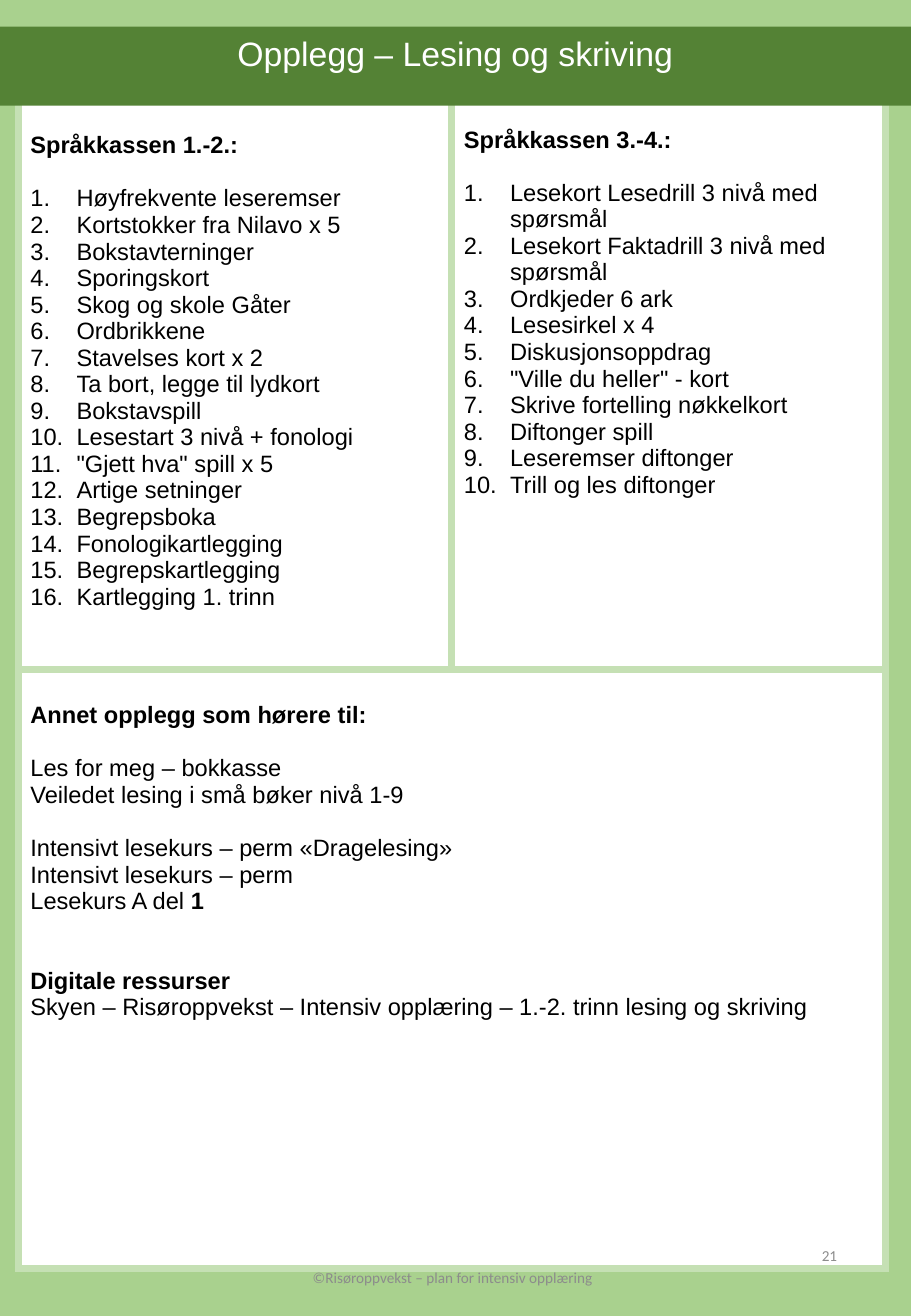
from lxml import etree
from pptx import Presentation
from pptx import util as u
from pptx.dml.color import RGBColor
from pptx.enum import shapes, text
from pptx.oxml import ns

COLORS = {"background": "A9D18E", "border": "C5E0B4", "banner": "548235",
          "cell": "FFFFFF", "title": "FFFFFF", "body": "000000", "footer": "8C8C8C"}
WIDTH, HEIGHT = 7.5, 10.83
LINE = 15.75
TITLE = "Opplegg – Lesing og skriving"
FOOTERS = [
    ("21", text.PP_ALIGN.RIGHT, 5.3, 10.04, 1.69),
    ("©Risøroppvekst – plan for intensiv opplæring", text.PP_ALIGN.CENTER, 2.46, 10.22, 2.53),
]
FIRST_BOX = [
    "Høyfrekvente leseremser", "Kortstokker fra Nilavo x 5", "Bokstavterninger",
    "Sporingskort", "Skog og skole Gåter", "Ordbrikkene", "Stavelses kort x 2",
    "Ta bort, legge til lydkort", "Bokstavspill", "Lesestart 3 nivå + fonologi",
    "\"Gjett hva\" spill x 5", "Artige setninger", "Begrepsboka",
    "Fonologikartlegging", "Begrepskartlegging", "Kartlegging 1. trinn",
]
SECOND_BOX = [
    "Lesekort Lesedrill 3 nivå med spørsmål", "Lesekort Faktadrill 3 nivå med spørsmål",
    "Ordkjeder 6 ark", "Lesesirkel x 4", "Diskusjonsoppdrag",
    "\"Ville du heller\" - kort", "Skrive fortelling nøkkelkort", "Diftonger spill",
    "Leseremser diftonger", "Trill og les diftonger",
]


def numbered(heading, items):
    return [([(heading, True)], 0, False)] + [
        ([(item, False)], int(index == 0), True) for index, item in enumerate(items)]


OTHER = [
    ([("Annet opplegg som hørere til:", True)], 0, False),
    ([("Les for meg – bokkasse", False)], 1, False),
    ([("Veiledet lesing i små bøker nivå 1-9", False)], 0, False),
    ([("Intensivt lesekurs – perm «Dragelesing»", False)], 1, False),
    ([("Intensivt lesekurs – perm", False)], 0, False),
    ([("Lesekurs A del ", False), ("1", True)], 0, False),
    ([("Digitale ressurser", True)], 2, False),
    ([("Skyen – Risøroppvekst – Intensiv opplæring – 1.-2. trinn lesing og skriving", False)], 0, False),
]
CELLS = [
    (0, 0, 14, numbered("Språkkassen 1.-2.:", FIRST_BOX)),
    (0, 1, 11, numbered("Språkkassen 3.-4.:", SECOND_BOX)),
    (1, 0, 14, OTHER),
]
COLUMNS, ROWS = [3.57, 3.57], [4.69, 4.93]


def color(name):
    return RGBColor.from_string(COLORS[name])


def style(run, font_name, size, color_name, bold=False):
    run.font.name = font_name
    run.font.size = u.Pt(size)
    run.font.bold = bold
    run.font.color.rgb = color(color_name)


def add_border(cell):
    properties = cell._tc.get_or_add_tcPr()
    for index, side in enumerate(("lnL", "lnR", "lnT", "lnB")):
        line = etree.Element(ns.qn("a:" + side), w=str(u.Pt(4.5)))
        fill = etree.SubElement(line, ns.qn("a:solidFill"))
        etree.SubElement(fill, ns.qn("a:srgbClr"), val=COLORS["border"])
        properties.insert(index, line)


def add_number(paragraph):
    properties = paragraph._p.get_or_add_pPr()
    indent = u.Inches(0.38)
    properties.set("marL", str(indent))
    properties.set("indent", str(-indent))
    etree.SubElement(properties, ns.qn("a:buFont"), typeface="Arial")
    etree.SubElement(properties, ns.qn("a:buAutoNum"), type="arabicPeriod")


def fill_cell(cell, lead_size, content):
    cell.fill.solid()
    cell.fill.fore_color.rgb = color("cell")
    cell.margin_top = u.Inches(0.05) + u.Pt(lead_size * LINE / 14)
    frame = cell.text_frame
    for index, (runs, gap, is_numbered) in enumerate(content):
        paragraph = frame.paragraphs[0] if index == 0 else frame.add_paragraph()
        if is_numbered:
            add_number(paragraph)
        if gap:
            paragraph.space_before = u.Pt(gap * LINE)
        for words, bold in runs:
            run = paragraph.add_run()
            run.text = words
            style(run, "Arial", 14, "body", bold)


def add_grid(slide):
    table = slide.shapes.add_table(
        len(ROWS), len(COLUMNS), u.Inches(0.15), u.Inches(0.82),
        u.Inches(sum(COLUMNS)), u.Inches(sum(ROWS))).table
    table.first_row = table.horz_banding = False
    for column, width in zip(table.columns, COLUMNS):
        column.width = u.Inches(width)
    for row, height in zip(table.rows, ROWS):
        row.height = u.Inches(height)
    table.cell(1, 0).merge(table.cell(1, 1))
    for row, column, lead_size, content in CELLS:
        fill_cell(table.cell(row, column), lead_size, content)
    for cell in table.iter_cells():
        add_border(cell)


def add_banner(slide):
    banner = slide.shapes.add_shape(
        shapes.MSO_SHAPE.RECTANGLE, 0, u.Inches(0.22), u.Inches(WIDTH), u.Inches(0.65))
    banner.shadow.inherit = False
    banner.fill.solid()
    banner.fill.fore_color.rgb = color("banner")
    banner.line.fill.background()
    frame = banner.text_frame
    frame.text = TITLE
    frame.vertical_anchor = text.MSO_ANCHOR.TOP
    paragraph = frame.paragraphs[0]
    paragraph.alignment = text.PP_ALIGN.CENTER
    style(paragraph.runs[0], "Arial", 20, "title")


def add_footer(slide, words, alignment, left, top, width):
    box = slide.shapes.add_textbox(*map(u.Inches, (left, top, width, 0.58)))
    frame = box.text_frame
    frame.word_wrap = True
    frame.vertical_anchor = text.MSO_ANCHOR.MIDDLE
    frame.text = words
    paragraph = frame.paragraphs[0]
    paragraph.alignment = alignment
    style(paragraph.runs[0], "Calibri", 9, "footer")


def main():
    presentation = Presentation()
    presentation.slide_width = u.Inches(WIDTH)
    presentation.slide_height = u.Inches(HEIGHT)
    slide = presentation.slides.add_slide(presentation.slide_layouts[6])
    slide.background.fill.solid()
    slide.background.fill.fore_color.rgb = color("background")
    add_grid(slide)
    add_banner(slide)
    for footer in FOOTERS:
        add_footer(slide, *footer)
    presentation.save("out.pptx")


if __name__ == "__main__":
    main()
